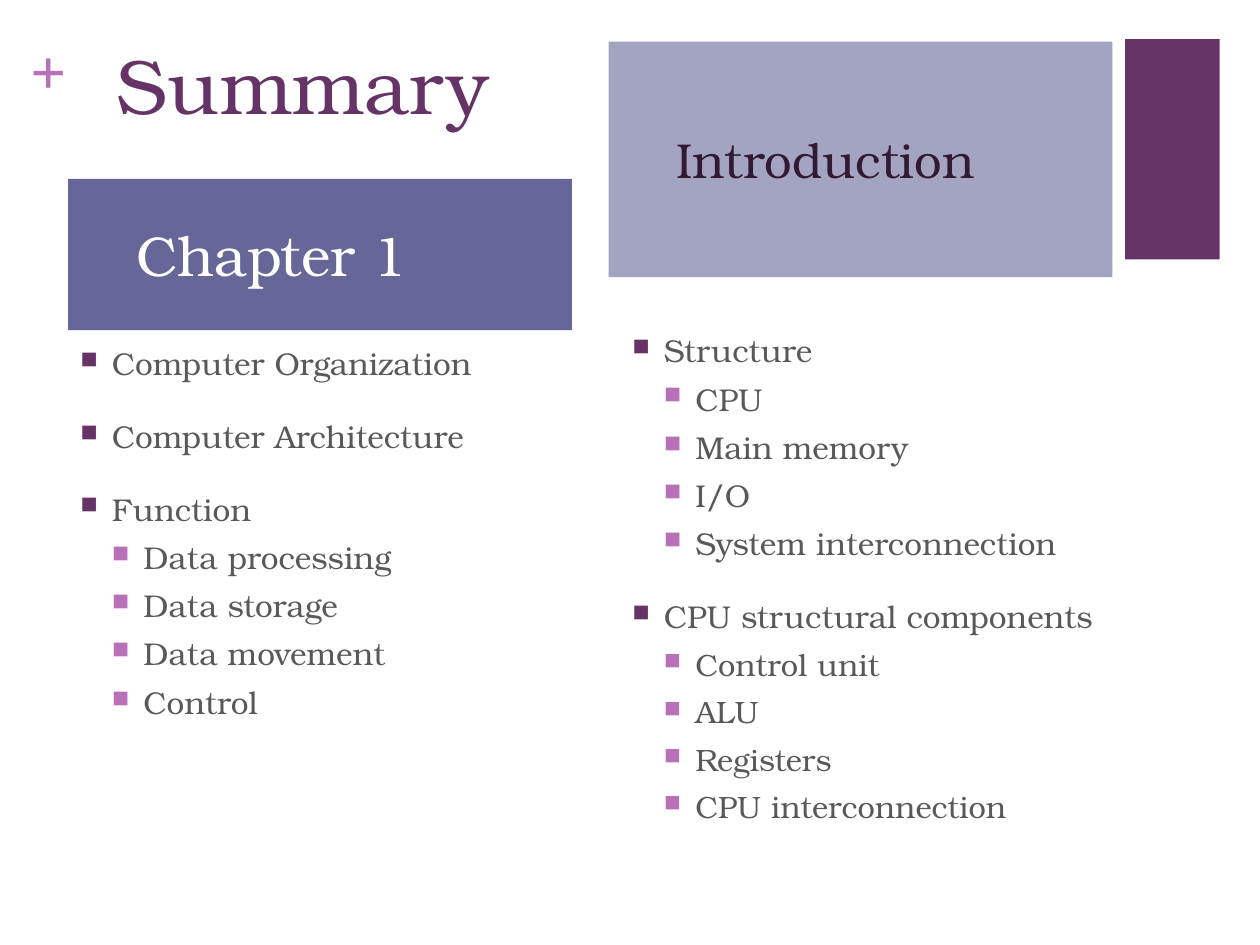
from pptx import Presentation
from pptx.dml.color import RGBColor as RGB
from pptx.enum.shapes import MSO_SHAPE as Shape
from pptx.enum.text import MSO_ANCHOR as Anchor, PP_ALIGN as Align
from pptx.oxml import parse_xml
from pptx.oxml.ns import nsdecls
from pptx.util import Inches, Pt

THEME = {
    "serif": "TeX Gyre Bonum", "plain": "Times New Roman",
    "plum": "663366", "pink": "B870B8", "gray": "595959", "white": "FFFFFF",
    "blue": "666699", "pale": "A3A3C2", "dark": "331A33",
    "title": 44, "plus": 36, "head": 32, "intro": 28, "body": 18, "small": 17.6,
}
COLS, ROWS = 100, 75
INDENT = 0.25

deck = Presentation()
deck.slide_width, deck.slide_height = Inches(10), Inches(7.5)
slide = deck.slides.add_slide(deck.slide_layouts[6])
COL, ROW = deck.slide_width / COLS, deck.slide_height / ROWS


def place(col, row, wide, high, fill=None):
    """Add a text box, or a rectangle if a fill is named, on the grid."""
    spot = [int(n) for n in (col * COL, row * ROW, wide * COL, high * ROW)]
    if fill is None:
        box = slide.shapes.add_textbox(*spot)
    else:
        box = slide.shapes.add_shape(Shape.RECTANGLE, *spot)
        box.shadow.inherit = False
        box.fill.solid()
        box.fill.fore_color.rgb = RGB.from_string(THEME[fill])
        box.line.fill.background()
    box.text_frame.word_wrap = True
    return box.text_frame


def write(para, text, size, color, face="serif", bold=False):
    run = para.add_run()
    run.text = text
    look = {"name": THEME[face], "size": Pt(THEME[size]), "bold": bold}
    for key, value in look.items():
        setattr(run.font, key, value)
    run.font.color.rgb = RGB.from_string(THEME[color])


# Corner block, plus sign and title
place(89.3, 3.1, 7.5, 17.5, "plum")

plus = place(2.4, 2.5, 2.9, 6.1)
for side in ("left", "top", "right", "bottom"):
    setattr(plus, f"margin_{side}", 0)
plus.word_wrap = False
write(plus.paragraphs[0], "+", "plus", "pink", "plain", True)

title = place(8.3, 2.5, 44.5, 12.2)
write(title.paragraphs[0], "Summary", "title", "plum")

# Bullet lists: (level, text, size)
left = [
    (0, "Computer Organization", "body"),
    (0, "Computer Architecture", "body"),
    (0, "Function", "body"),
    (1, "Data processing", "body"),
    (1, "Data storage", "body"),
    (1, "Data movement", "body"),
    (1, "Control", "body"),
]
right = [
    (0, "Structure", "body"),
    (1, "CPU", "body"),
    (1, "Main memory", "body"),
    (1, "I/O", "body"),
    (1, "System interconnection", "body"),
    (0, "CPU structural components", "body"),
    (1, "Control unit", "small"),
    (1, "ALU", "small"),
    (1, "Registers", "small"),
    (1, "CPU interconnection", "small"),
]
levels = [{"gap": 20, "mark": "plum"}, {"gap": 6, "mark": "pink"}]

for spot, items in (((5.4, 26.8, 40, 40.2), left), ((49.2, 25.8, 40, 43.3), right)):
    frame = place(*spot)
    for i, (level, text, size) in enumerate(items):
        para = frame.add_paragraph() if i else frame.paragraphs[0]
        style = levels[level]
        para.level = level
        para.space_before = Pt(style["gap"] if i else 0)
        props = para._p.get_or_add_pPr()
        props.set("marL", str(Inches(INDENT * (level + 1))))
        props.set("indent", str(Inches(-INDENT)))
        for tag in (
            f'<a:buClr {nsdecls("a")}><a:srgbClr val="{THEME[style["mark"]]}"/></a:buClr>',
            f'<a:buSzPct {nsdecls("a")} val="75000"/>',
            f'<a:buChar {nsdecls("a")} char="■"/>',
        ):
            props.append(parse_xml(tag))
        write(para, text, size, "gray")

# Heading panels: the wide right margin shifts the centred text left
panels = [
    ((5.4, 14.2, 40, 12, "blue"), "Chapter 1", "head", "white", 0.86),
    ((48.3, 3.3, 40, 18.7, "pale"), "Introduction", "intro", "dark", 0.66),
]
for spot, text, size, color, inset in panels:
    frame = place(*spot)
    form = {
        "vertical_anchor": Anchor.MIDDLE, "margin_left": Inches(0.1),
        "margin_right": Inches(inset), "margin_top": 0, "margin_bottom": 0,
    }
    for key, value in form.items():
        setattr(frame, key, value)
    para = frame.paragraphs[0]
    para.alignment = Align.CENTER
    write(para, text, size, color)

deck.save("out.pptx")
